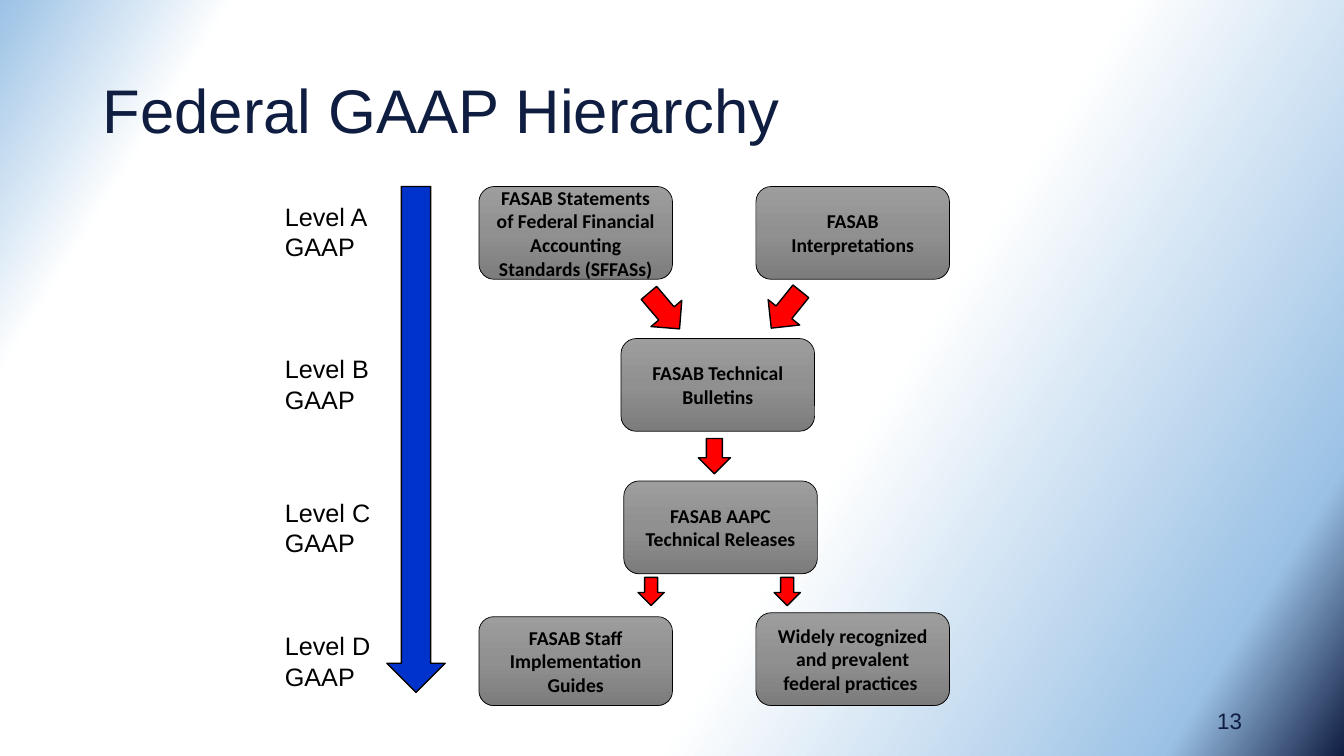
from lxml.etree import SubElement
from pptx import Presentation
from pptx.dml.color import RGBColor
from pptx.enum.shapes import MSO_SHAPE as Preset
from pptx.enum.text import MSO_ANCHOR as Anchor, MSO_AUTO_SIZE as AutoSize, PP_ALIGN as Align
from pptx.oxml.ns import qn
from pptx.util import Cm, Pt

NAVY, BLACK, RED, BLUE = "0F1D41", "000000", "FF0000", "0033CC"
SKY = [(0, "9BC2E5"), (13, "FFFFFF"), (62, "FFFFFF"), (90, "9BC2E5"), (100, NAVY)]
GREY = [(0, "9D9D9D"), (50, "909090"), (100, "7C7C7C")]
BOX_WIDTH, BOX_HEIGHT = 4.88, 2.34
LEFT_COLUMN, RIGHT_COLUMN = 12.07, 19.05

# left, top, height, wording
STANDARDS = [
    (LEFT_COLUMN, 4.7, BOX_HEIGHT,
     "FASAB Statements of Federal Financial Accounting Standards (SFFASs)"),
    (RIGHT_COLUMN, 4.7, BOX_HEIGHT, "FASAB Interpretations"),
    (15.65, 8.53, BOX_HEIGHT, "FASAB Technical Bulletins"),
    (15.72, 12.12, BOX_HEIGHT, "FASAB AAPC Technical Releases"),
    (LEFT_COLUMN, 15.54, 2.24, "FASAB Staff Implementation Guides"),
    (RIGHT_COLUMN, 15.44, BOX_HEIGHT, "Widely recognized and prevalent federal practices "),
]

# letter, top, width
LEVELS = [("A", 4.95, 3.02), ("B", 8.79, 3.94), ("C", 12.4, 3.94), ("D", 15.77, 3.94)]

# left, top, width, height, rotation, colour
ARROWS = [
    (16.23, 7.24, 1.02, 1.19, 319.6, RED),
    (19.3, 7.21, 1.02, 1.19, 38.8, RED),
    (17.6, 11.05, 0.81, 0.89, 0, RED),
    (16.08, 14.55, 0.66, 0.71, 0, RED),
    (19.51, 14.55, 0.66, 0.71, 0, RED),
    (9.75, 4.7, 1.47, 12.75, 0, BLUE),
]


def colour(hex_text):
    return RGBColor.from_string(hex_text)


def cm(*lengths):
    return [Cm(length) for length in lengths]


def set_gradient(fill, owner, stops, clockwise):
    fill.gradient()
    fill.gradient_angle = 360 - clockwise
    stop_list = owner.element.find(".//" + qn("a:gsLst"))
    for old_stop in list(stop_list):
        stop_list.remove(old_stop)
    for percent, hex_text in stops:
        stop = SubElement(stop_list, qn("a:gs"), pos=str(percent * 1000))
        SubElement(stop, qn("a:srgbClr"), val=hex_text)


def write(frame, wording, size, font, hex_text, align=Align.LEFT, anchor=Anchor.MIDDLE, bold=False):
    frame.word_wrap = True
    frame.vertical_anchor = anchor
    paragraph = frame.paragraphs[0]
    paragraph.alignment = align
    run = paragraph.add_run()
    run.text = wording
    run.font.size, run.font.name, run.font.bold = Pt(size), font, bold
    run.font.color.rgb = colour(hex_text)
    return paragraph


def add_outlined(slide, preset, place, line_width):
    outlined = slide.shapes.add_shape(preset, *cm(*place))
    outlined.shadow.inherit = False
    outlined.line.color.rgb = colour(BLACK)
    outlined.line.width = Pt(line_width)
    return outlined


def add_title(slide, wording):
    title = slide.shapes.title
    title.left, title.top, title.width, title.height = cm(2.34, 1.02, 29.21, 3.68)
    title.text_frame.auto_size = AutoSize.NONE
    write(title.text_frame, wording, 44, "Arial", NAVY).line_spacing = 0.9


def add_standard(slide, left, top, height, wording):
    box = add_outlined(slide, Preset.ROUNDED_RECTANGLE, (left, top, BOX_WIDTH, height), 0.5)
    set_gradient(box.fill, box, GREY, 90)
    write(box.text_frame, wording, 14, "Calibri", BLACK, Align.CENTER, bold=True)


def add_arrow(slide, left, top, width, height, rotation, hex_text):
    arrow = add_outlined(slide, Preset.DOWN_ARROW, (left, top, width, height), 1)
    arrow.fill.solid()
    arrow.fill.fore_color.rgb = colour(hex_text)
    arrow.rotation = rotation


def add_level(slide, letter, top, width):
    label = slide.shapes.add_textbox(*cm(6.93, top, width, 1.8)).text_frame
    write(label, f"Level {letter} GAAP", 18, "Arial", BLACK, anchor=Anchor.TOP)
    label.auto_size = AutoSize.SHAPE_TO_FIT_TEXT


def add_page_number(slide, number):
    page = slide.shapes.add_textbox(*cm(23.93, 17.65, 7.62, 1.02)).text_frame
    write(page, number, 16, "Arial", NAVY, Align.RIGHT)


def main():
    deck = Presentation()
    deck.slide_width, deck.slide_height = cm(33.87, 19.05)
    slide = deck.slides.add_slide(deck.slide_layouts.get_by_name("Title Only"))

    # Backdrop and heading
    set_gradient(slide.background.fill, slide, SKY, 32)
    add_title(slide, "Federal GAAP Hierarchy")
    add_page_number(slide, "13")

    # Hierarchy
    for standard in STANDARDS:
        add_standard(slide, *standard)
    for level in LEVELS:
        add_level(slide, *level)
    for arrow in ARROWS:
        add_arrow(slide, *arrow)

    deck.save("out.pptx")


if __name__ == "__main__":
    main()
